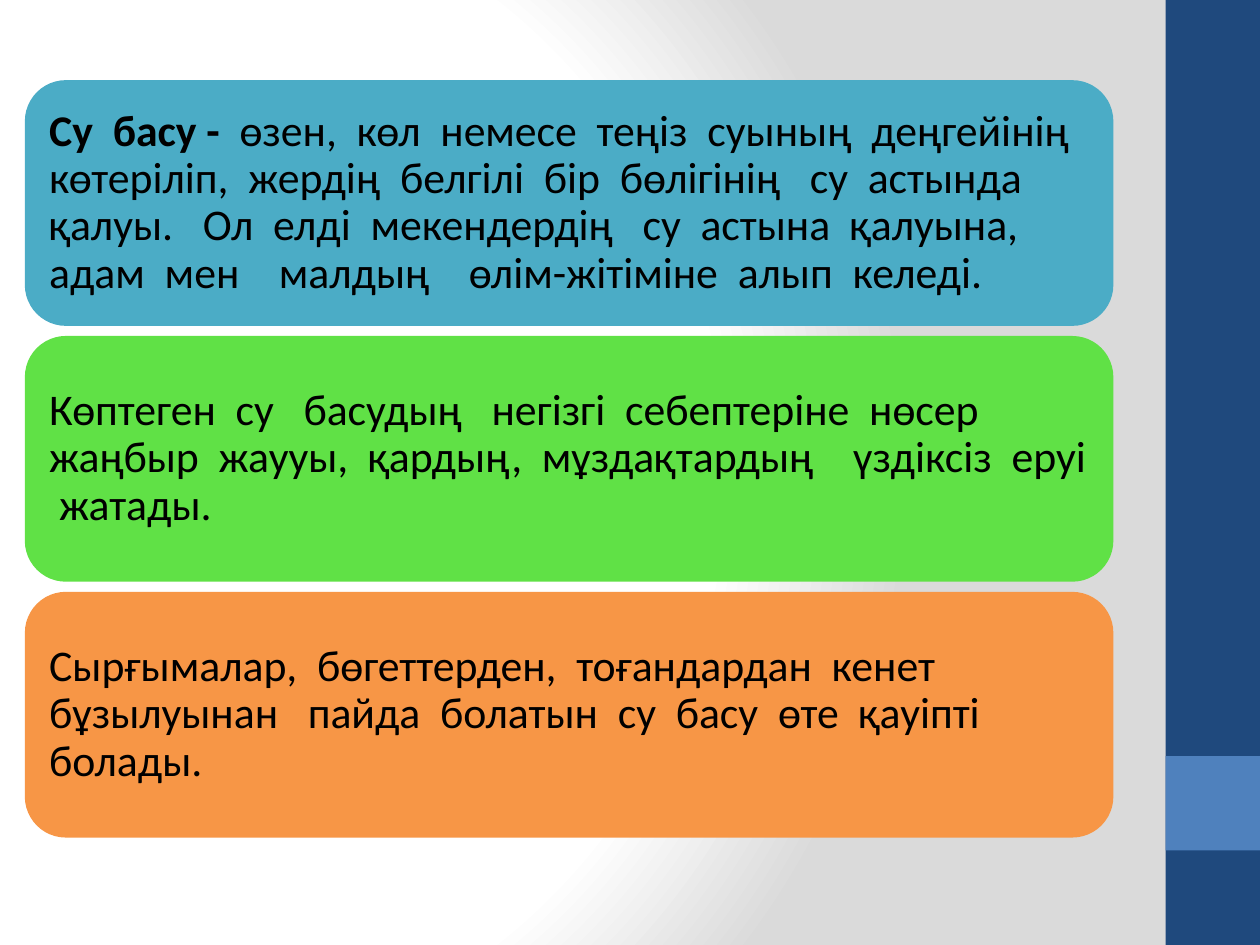
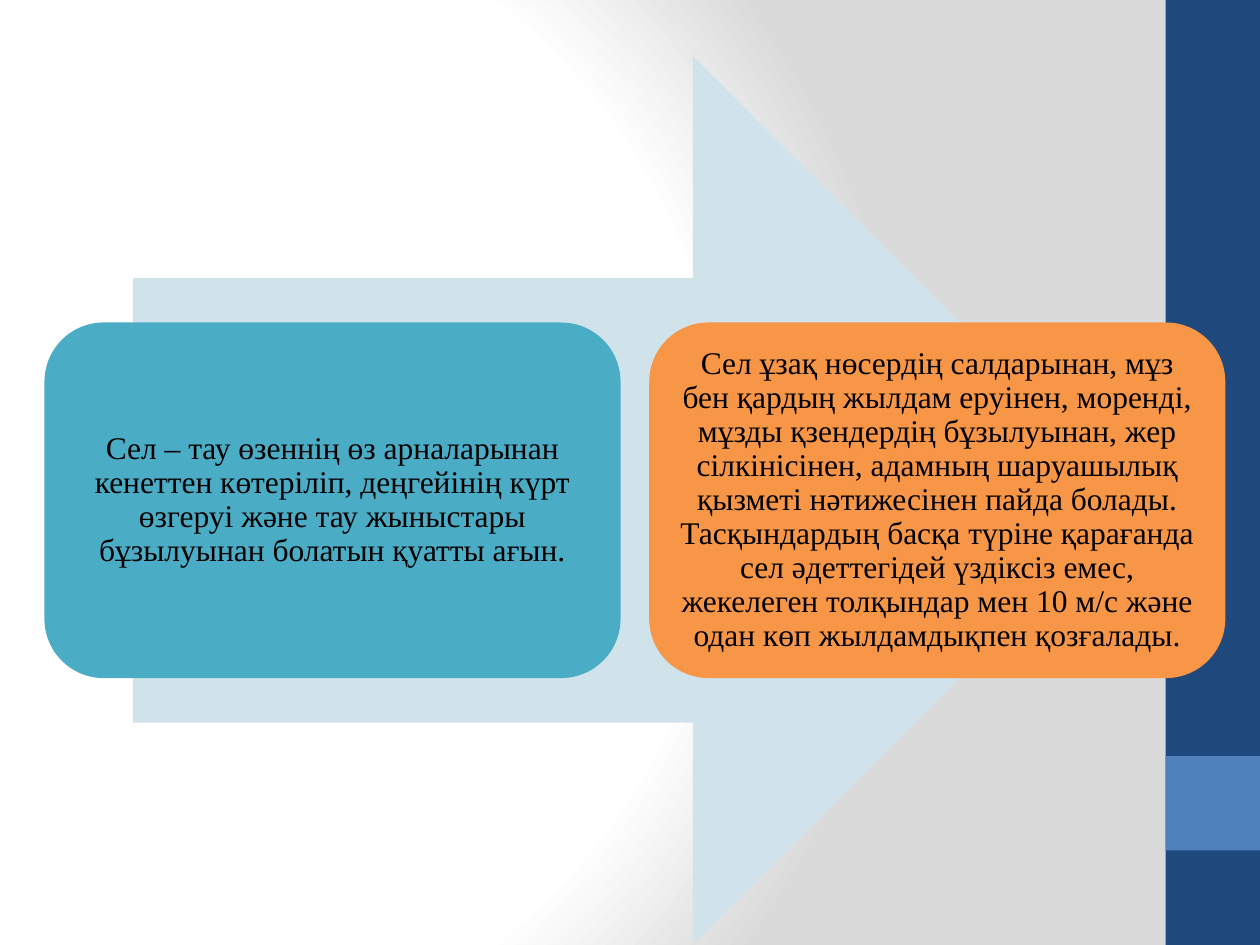
import pptx
import pptx.util
import pptx.dml.color
import pptx.enum.shapes
import pptx.enum.text
import pptx.oxml

Pt = pptx.util.Pt
RGBColor = pptx.dml.color.RGBColor
SHAPE = pptx.enum.shapes.MSO_SHAPE
ALIGN = pptx.enum.text.PP_ALIGN

NAVY = RGBColor(0x1F, 0x49, 0x7D)
BLUE = RGBColor(0x4F, 0x81, 0xBD)
TEAL = RGBColor(0x4B, 0xAC, 0xC6)
GREEN = RGBColor(0x60, 0xE1, 0x46)
ORANGE = RGBColor(0xF7, 0x96, 0x46)
PALE_BLUE = RGBColor(0xD0, 0xE3, 0xEA)
BLACK = RGBColor(0, 0, 0)

# Content: each card is a fill colour and its runs (text, bold)
FLOOD_CARDS = [
    (TEAL, [
        ("Су  басу -", True),
        ("  өзен,  көл  немесе  теңіз  суының  деңгейінің  көтеріліп,  жердің  белгілі  "
         "бір  бөлігінің   су  астында  қалуы.   Ол  елді  мекендердің   су  астына  "
         "қалуына,  адам  мен    малдың    өлім-жітіміне  алып  келеді.", False)]),
    (GREEN, [
        ("Көптеген  су   басудың   негізгі  себептеріне  нөсер  жаңбыр  жаууы,  қардың,  "
         "мұздақтардың    үздіксіз  еруі  жатады.", False)]),
    (ORANGE, [
        ("Сырғымалар,  бөгеттерден,  тоғандардан  кенет  бұзылуынан   пайда  болатын  су  "
         "басу  өте  қауіпті   болады.", False)]),
]
MUDFLOW_CARDS = [
    (TEAL, [
        ("Сел – тау өзеннің өз арналарынан кенеттен көтеріліп, деңгейінің күрт өзгеруі "
         "және тау жыныстары бұзылуынан болатын қуатты ағын.", False)]),
    (ORANGE, [
        ("Сел ұзақ нөсердің салдарынан, мұз бен қардың жылдам еруінен, моренді, мұзды "
         "қзендердің бұзылуынан, жер сілкінісінен, адамның шаруашылық қызметі нәтижесінен "
         "пайда болады. Тасқындардың басқа түріне қарағанда сел әдеттегідей үздіксіз емес, "
         "жекелеген толқындар мен 10 м/с және одан көп жылдамдықпен қозғалады.", False)]),
]

# Layout in points
SLIDE_WIDTH, SLIDE_HEIGHT = 720, 540
BAND_WIDTH = 54
BAND_LEFT = SLIDE_WIDTH - BAND_WIDTH
BAND_SQUARE_TOP = 432

BACKGROUND_GRADIENT = """
<a:gradFill xmlns:a="http://schemas.openxmlformats.org/drawingml/2006/main" rotWithShape="1">
  <a:gsLst>
    <a:gs pos="0"><a:srgbClr val="FFFFFF"/></a:gs>
    <a:gs pos="75000"><a:srgbClr val="FFFFFF"/></a:gs>
    <a:gs pos="100000"><a:srgbClr val="DADADA"/></a:gs>
  </a:gsLst>
  <a:path path="circle"><a:fillToRect l="20000" t="50000" r="100000" b="50000"/></a:path>
</a:gradFill>"""


def set_background(master):
    fill = master.background.fill
    fill.gradient()
    gradient = master.element.cSld.bg.bgPr.eg_fillProperties
    gradient.getparent().replace(gradient, pptx.oxml.parse_xml(BACKGROUND_GRADIENT))


def add_plain_shape(slide, kind, left, top, width, height, color):
    shape = slide.shapes.add_shape(kind, Pt(left), Pt(top), Pt(width), Pt(height))
    shape.shadow.inherit = False
    shape.fill.solid()
    shape.fill.fore_color.rgb = color
    shape.line.fill.background()
    return shape


def add_slide(presentation):
    slide = presentation.slides.add_slide(presentation.slide_layouts[6])
    add_plain_shape(slide, SHAPE.RECTANGLE, BAND_LEFT, 0, BAND_WIDTH, SLIDE_HEIGHT, NAVY)
    add_plain_shape(slide, SHAPE.RECTANGLE, BAND_LEFT, BAND_SQUARE_TOP,
                    BAND_WIDTH, BAND_WIDTH, BLUE)
    return slide


def add_card(slide, left, top, width, height, card, font_name, size, inset, alignment):
    color, runs = card
    shape = add_plain_shape(slide, SHAPE.ROUNDED_RECTANGLE, left, top, width, height, color)
    frame = shape.text_frame
    frame.word_wrap = True
    frame.vertical_anchor = pptx.enum.text.MSO_ANCHOR.MIDDLE
    frame.margin_left = frame.margin_right = Pt(inset)
    frame.margin_top = frame.margin_bottom = Pt(inset)
    paragraph = frame.paragraphs[0]
    paragraph.alignment = alignment
    paragraph.line_spacing = 0.9
    for text, bold in runs:
        run = paragraph.add_run()
        run.text = text
        run.font.name = font_name
        run.font.size = Pt(size)
        run.font.bold = bold
        run.font.color.rgb = BLACK


def build_flood_slide(presentation):
    slide = add_slide(presentation)
    left, top, width, height, gap = 14.2, 45.8, 622, 140.4, 5.8
    for row, card in enumerate(FLOOD_CARDS):
        add_card(slide, left, top + row * (height + gap), width, height, card,
                 "Calibri", 25, 7.2, ALIGN.LEFT)


def build_mudflow_slide(presentation):
    slide = add_slide(presentation)
    # Arrow behind the cards
    add_plain_shape(slide, SHAPE.RIGHT_ARROW, 76, 32, 574, 508, PALE_BLUE)
    left, top, width, height, gap = 25.4, 184.3, 329.2, 203.2, 16.4
    for column, card in enumerate(MUDFLOW_CARDS):
        add_card(slide, left + column * (width + gap), top, width, height, card,
                 "Times New Roman", 18, 5, ALIGN.CENTER)


def main():
    presentation = pptx.Presentation()
    presentation.slide_width = Pt(SLIDE_WIDTH)
    presentation.slide_height = Pt(SLIDE_HEIGHT)
    set_background(presentation.slide_master)
    build_flood_slide(presentation)
    build_mudflow_slide(presentation)
    presentation.save("out.pptx")


if __name__ == "__main__":
    main()
